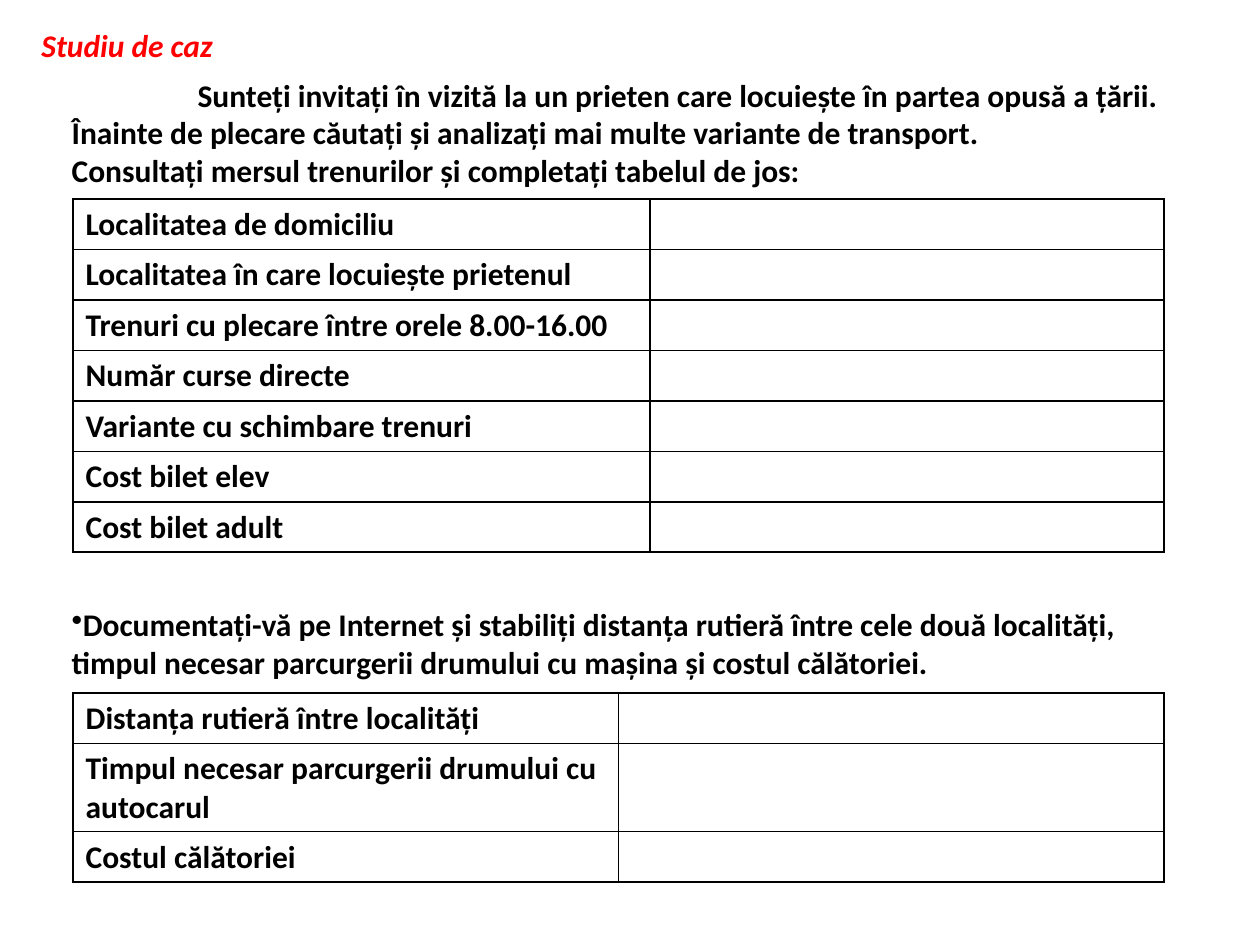
from dataclasses import dataclass

from pptx import Presentation
from pptx import util as u
from pptx.dml import color
from pptx.enum import text
from pptx.oxml import xmlchemy as xml


@dataclass(frozen=True)
class Theme:
    """Hold the slide's colours, font and sizes."""
    ink: str = "000000"
    accent: str = "FF0000"
    paper: str = "FFFFFF"
    font: str = "Calibri"
    size: int = 18
    border: int = 1
    row: float = 0.4


THEME = Theme()
TRAIN_ROWS = [
    "Localitatea de domiciliu",
    "Localitatea în care locuiește prietenul",
    "Trenuri cu plecare între orele 8.00-16.00",
    "Număr curse directe",
    "Variante cu schimbare trenuri",
    "Cost bilet elev",
    "Cost bilet adult",
]
ROAD_ROWS = [
    "Distanța rutieră între localități",
    "Timpul necesar parcurgerii drumului cu autocarul",
    "Costul călătoriei",
]
INTRO = [
    "Sunteți invitați în vizită la un prieten care locuiește în partea opusă a țării.",
    "Înainte de plecare căutați și analizați mai multe variante de transport.",
    "Consultați mersul trenurilor și completați tabelul de jos:",
]
ROAD_TASK = (
    "Documentați-vă pe Internet și stabiliți distanța rutieră între cele două "
    "localități, timpul necesar parcurgerii drumului cu mașina și costul călătoriei."
)


def style_text(tf, ink=THEME.ink, italic=None):
    """Format every paragraph of a text frame in the slide's bold type."""
    for p in tf.paragraphs:
        for f in [p.font] + [r.font for r in p.runs]:
            f.name, f.size = THEME.font, u.Pt(THEME.size)
            f.bold, f.italic = True, italic
            f.color.rgb = color.RGBColor.from_string(ink)


def add_text(s, lines, x, y, w, h, **style):
    """Add a wrapped text box with one paragraph per line."""
    tf = s.shapes.add_textbox(*map(u.Inches, (x, y, w, h))).text_frame
    tf.word_wrap = True
    tf.auto_size = text.MSO_AUTO_SIZE.SHAPE_TO_FIT_TEXT
    tf.text = "\n".join(lines)
    style_text(tf, **style)
    return tf


def indent_first_line(p, inches):
    """Indent the first line of a paragraph."""
    p._p.get_or_add_pPr().set("indent", str(u.Inches(inches)))


def add_bullet(p):
    """Give a paragraph a round bullet without a hanging indent."""
    pPr = p._p.get_or_add_pPr()
    bullet = xml.OxmlElement("a:buChar")
    bullet.set("char", "•")
    pPr.insert_element_before(bullet, "a:tabLst", "a:defRPr", "a:extLst")


def add_borders(cell):
    """Draw a solid line on all four sides of a cell."""
    tcPr = cell._tc.get_or_add_tcPr()
    for i, side in enumerate(("lnL", "lnR", "lnT", "lnB")):
        ln = xml.OxmlElement(f"a:{side}")
        ln.set("w", str(u.Pt(THEME.border)))
        fill = xml.OxmlElement("a:solidFill")
        ink = xml.OxmlElement("a:srgbClr")
        ink.set("val", THEME.ink)
        fill.append(ink)
        ln.append(fill)
        tcPr.insert(i, ln)


def add_form(s, labels, x, y, widths, heights):
    """Add a table with labels on the left and empty answers on the right."""
    frame = s.shapes.add_table(
        len(labels), len(widths),
        *map(u.Inches, (x, y, sum(widths), sum(heights))))
    table = frame.table
    table.first_row = table.horz_banding = False
    for col, width in zip(table.columns, widths):
        col.width = u.Inches(width)
    for row, label, height in zip(table.rows, labels, heights):
        row.height = u.Inches(height)
        row.cells[0].text_frame.text = label
        for cell in row.cells:
            style_text(cell.text_frame)
            cell.fill.background()
            add_borders(cell)


def main():
    """Build the case study slide."""
    prs = Presentation()
    prs.slide_width, prs.slide_height = u.Inches(10), u.Inches(7.5)
    s = prs.slides.add_slide(prs.slide_layouts[6])
    s.background.fill.solid()
    s.background.fill.fore_color.rgb = color.RGBColor.from_string(THEME.paper)

    add_text(s, ["Studiu de caz"], 0.23, 0.16, 3.75, 0.4,
             ink=THEME.accent, italic=True)
    intro = add_text(s, INTRO, 0.47, 0.55, 8.91, 1.01)
    indent_first_line(intro.paragraphs[0], 1)
    add_form(s, TRAIN_ROWS, 0.58, 1.58, (4.58, 4.08),
             [THEME.row] * len(TRAIN_ROWS))

    task = add_text(s, [ROAD_TASK], 0.47, 4.75, 8.91, 0.71)
    add_bullet(task.paragraphs[0])
    add_form(s, ROAD_ROWS, 0.58, 5.5, (4.33, 4.33),
             (THEME.row, 0.7, THEME.row))
    prs.save("out.pptx")


if __name__ == "__main__":
    main()
